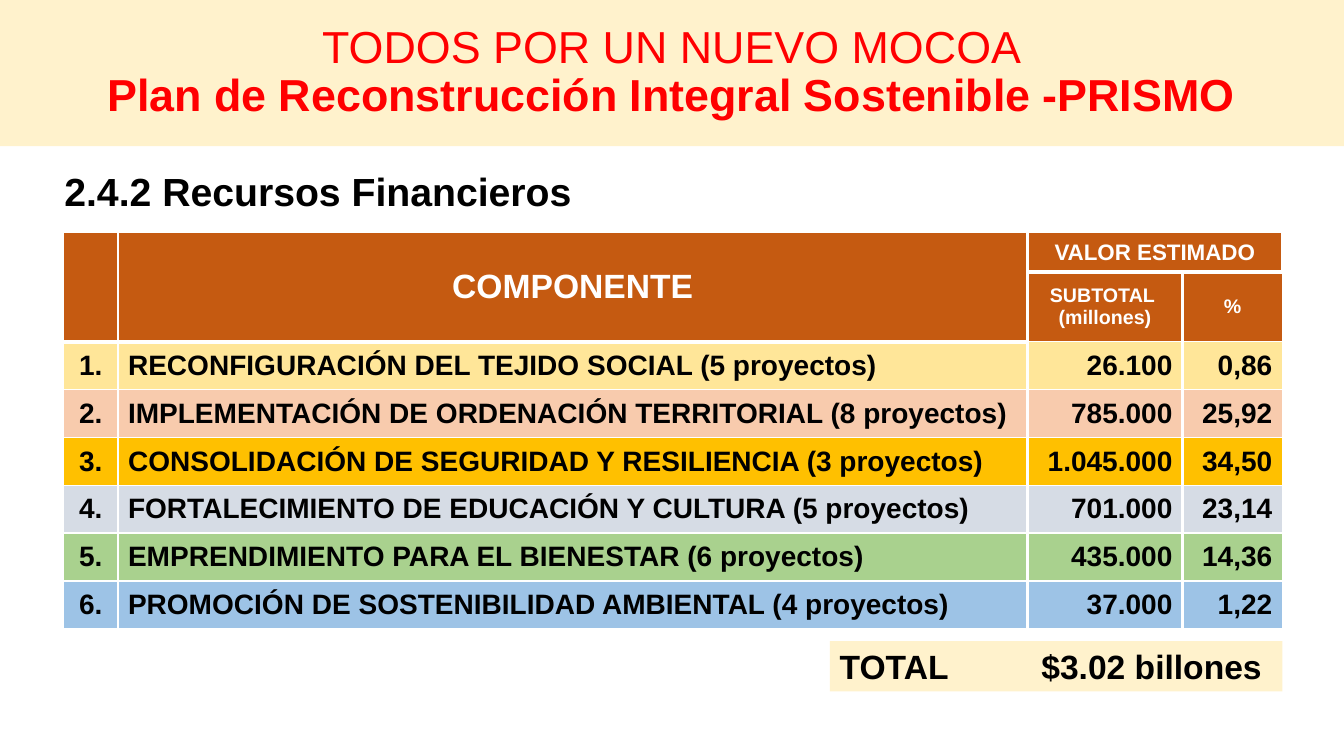
from lxml import etree
from pptx import Presentation
from pptx.dml.color import RGBColor
from pptx.enum.shapes import MSO_SHAPE
from pptx.enum.text import MSO_ANCHOR, PP_ALIGN
from pptx.oxml.ns import qn
from pptx.util import Inches, Pt

LEFT, CENTER, RIGHT = PP_ALIGN.LEFT, PP_ALIGN.CENTER, PP_ALIGN.RIGHT
TOP, MIDDLE = MSO_ANCHOR.TOP, MSO_ANCHOR.MIDDLE
RECTANGLE = MSO_SHAPE.RECTANGLE

RED = RGBColor(0xFF, 0x00, 0x00)
BLACK = RGBColor(0x00, 0x00, 0x00)
WHITE = RGBColor(0xFF, 0xFF, 0xFF)
CREAM = RGBColor(0xFF, 0xF2, 0xCC)
BROWN = RGBColor(0xC5, 0x5A, 0x11)

SLOGAN = "TODOS POR UN NUEVO MOCOA"
PLAN = "Plan de Reconstrucción Integral Sostenible -PRISMO"
SECTION = "2.4.2 Recursos Financieros"
TOTAL = "TOTAL \t$3.02 billones"

# row, column, lines, size
HEADERS = [
    (0, 1, ["COMPONENTE"], 24),
    (0, 2, ["VALOR ESTIMADO"], 16),
    (1, 2, ["SUBTOTAL ", "(millones)"], 14),
    (1, 3, ["%"], 14),
]
HEADER_MERGES = [((0, 0), (1, 0)), ((0, 1), (1, 1)), ((0, 2), (0, 3))]
COMPONENTS = [
    ("RECONFIGURACIÓN DEL TEJIDO SOCIAL (5 proyectos)", "26.100", "0,86", RGBColor(0xFF, 0xE6, 0x99)),
    ("IMPLEMENTACIÓN DE ORDENACIÓN TERRITORIAL (8 proyectos)", "785.000", "25,92", RGBColor(0xF8, 0xCB, 0xAD)),
    ("CONSOLIDACIÓN DE SEGURIDAD Y RESILIENCIA (3 proyectos)", "1.045.000", "34,50", RGBColor(0xFF, 0xC0, 0x00)),
    ("FORTALECIMIENTO DE EDUCACIÓN Y CULTURA (5 proyectos)", "701.000", "23,14", RGBColor(0xD6, 0xDC, 0xE5)),
    ("EMPRENDIMIENTO PARA EL BIENESTAR (6 proyectos)", "435.000", "14,36", RGBColor(0xA9, 0xD1, 0x8E)),
    ("PROMOCIÓN DE SOSTENIBILIDAD AMBIENTAL (4 proyectos)", "37.000", "1,22", RGBColor(0x9D, 0xC3, 0xE6)),
]
COLUMN_ALIGNMENTS = [CENTER, LEFT, RIGHT, RIGHT]

SLIDE_W, SLIDE_H = 13.33, 7.5
TABLE_LEFT, TABLE_TOP = 0.63, 2.31
COLUMN_WIDTHS = [0.54, 9.02, 1.54, 0.99]
HEADER_HEIGHTS = [0.39, 0.69]
BODY_HEIGHT = 2.85 / len(COMPONENTS)
TABLE_W = sum(COLUMN_WIDTHS)
TOTAL_W, TOTAL_H, TOTAL_GAP = 4.49, 0.5, 0.12
TOTAL_TAB = 2


def style_font(font, size, color, bold=True):
    for attribute, value in {"name": "Arial", "size": Pt(size), "bold": bold}.items():
        setattr(font, attribute, value)
    font.color.rgb = color


def write(frame, lines, size, color, align=LEFT):
    for index, line in enumerate(lines):
        paragraph = frame.paragraphs[0] if index == 0 else frame.add_paragraph()
        paragraph.alignment = align
        run = paragraph.add_run()
        run.text = line
        style_font(run.font, size, color)


def add_band(slide, left, top, width, height, anchor):
    band = slide.shapes.add_shape(RECTANGLE, *map(Inches, (left, top, width, height)))
    band.shadow.inherit = False
    band.fill.solid()
    band.fill.fore_color.rgb = CREAM
    band.line.fill.background()
    band.text_frame.word_wrap = True
    band.text_frame.vertical_anchor = anchor
    return band.text_frame


def set_borders(cell, widths):
    """Draw white borders; widths are points for left, right, top and bottom."""
    properties = cell._tc.get_or_add_tcPr()
    for position, (side, width) in enumerate(zip(("lnL", "lnR", "lnT", "lnB"), widths)):
        line = etree.Element(qn(f"a:{side}"), w=str(Pt(width)))
        fill = etree.SubElement(line, qn("a:solidFill"))
        etree.SubElement(fill, qn("a:srgbClr"), val=str(WHITE))
        properties.insert(position, line)


def add_title(slide):
    paragraph = add_band(slide, 0, 0, SLIDE_W, 1.45, MIDDLE).paragraphs[0]
    paragraph.alignment = CENTER
    paragraph.line_spacing = 0.9
    slogan = paragraph.add_run()
    slogan.text = SLOGAN
    style_font(slogan.font, 32, RED, bold=False)
    paragraph.add_line_break()
    plan = paragraph.add_run()
    plan.text = PLAN
    style_font(plan.font, 32, RED)


def add_section(slide):
    box = slide.shapes.add_textbox(*map(Inches, (0.54, 1.66, 9.54, 0.53)))
    box.text_frame.word_wrap = True
    write(box.text_frame, [SECTION], 28, BLACK)
    box.text_frame.paragraphs[0].line_spacing = 0.9


def add_budget_table(slide):
    """Add the table and return its bottom edge in inches."""
    heights = HEADER_HEIGHTS + [BODY_HEIGHT] * len(COMPONENTS)
    last_column = len(COLUMN_WIDTHS) - 1
    frame = slide.shapes.add_table(
        len(heights), len(COLUMN_WIDTHS),
        *map(Inches, (TABLE_LEFT, TABLE_TOP, TABLE_W, sum(heights))))
    table = frame.table
    for column, width in zip(table.columns, COLUMN_WIDTHS):
        column.width = Inches(width)
    for row, height in zip(table.rows, heights):
        row.height = Inches(height)

    fills = [BROWN] * len(HEADER_HEIGHTS) + [component[-1] for component in COMPONENTS]
    for r, color in enumerate(fills):
        for c in range(len(COLUMN_WIDTHS)):
            cell = table.cell(r, c)
            cell.fill.solid()
            cell.fill.fore_color.rgb = color
            cell.vertical_anchor = MIDDLE
            thick_bottom = r == 0 or (r == 1 and c < 2)
            set_borders(cell, (1 if c == 0 else 2.25, 1 if c == last_column else 2.25,
                               1, 3 if thick_bottom else 1))

    for first, last in HEADER_MERGES:
        table.cell(*first).merge(table.cell(*last))
    for r, c, lines, size in HEADERS:
        write(table.cell(r, c).text_frame, lines, size, WHITE, CENTER)
    for number, (component, subtotal, share, _) in enumerate(COMPONENTS, 1):
        r = len(HEADER_HEIGHTS) + number - 1
        values = (f"{number}.", component, subtotal, share)
        for c, (value, align) in enumerate(zip(values, COLUMN_ALIGNMENTS)):
            write(table.cell(r, c).text_frame, [value], 20, BLACK, align)
    return TABLE_TOP + sum(heights)


def add_total(slide, top):
    left = TABLE_LEFT + TABLE_W - TOTAL_W
    frame = add_band(slide, left, top, TOTAL_W, TOTAL_H, TOP)
    properties = frame.paragraphs[0]._p.get_or_add_pPr()
    tabs = etree.SubElement(properties, qn("a:tabLst"))
    etree.SubElement(tabs, qn("a:tab"), pos=str(Inches(TOTAL_TAB)), algn="l")
    write(frame, [TOTAL], 24, BLACK)


def main():
    presentation = Presentation()
    presentation.slide_width = Inches(SLIDE_W)
    presentation.slide_height = Inches(SLIDE_H)
    slide = presentation.slides.add_slide(presentation.slide_layouts[6])
    add_title(slide)
    table_bottom = add_budget_table(slide)
    add_total(slide, table_bottom + TOTAL_GAP)
    add_section(slide)
    presentation.save("out.pptx")


if __name__ == "__main__":
    main()
